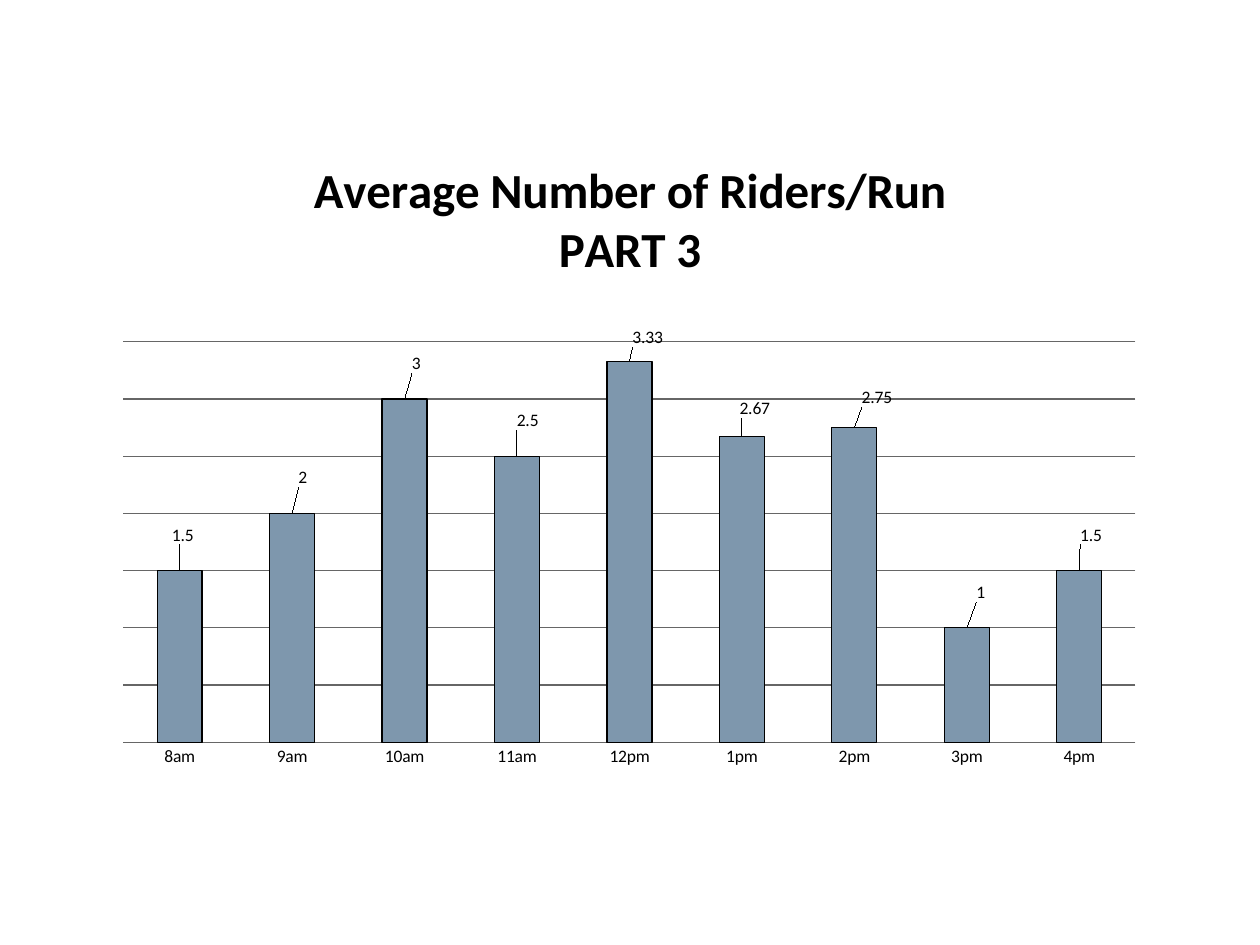
import lxml.etree
import pptx
import pptx.chart.data
import pptx.dml.color
import pptx.enum.chart
import pptx.oxml.ns
import pptx.util

BLACK = pptx.dml.color.RGBColor(0x00, 0x00, 0x00)
GRID_GRAY = pptx.dml.color.RGBColor(0x66, 0x66, 0x66)
STEEL_BLUE = pptx.dml.color.RGBColor(0x7E, 0x97, 0xAD)

TITLE_LINES = ["Average Number of Riders/Run", "PART 3"]

# Hour, riders per run, label shift right and down as shares of the chart
RIDERS = [
    ("8am", 1.5, 0.003, -0.03),
    ("9am", 2, 0.01, -0.03),
    ("10am", 3, 0.011, -0.03),
    ("11am", 2.5, 0.01, -0.03),
    ("12pm", 3.33, 0.017, -0.013),
    ("1pm", 2.67, 0.012, -0.02),
    ("2pm", 2.75, 0.021, -0.022),
    ("3pm", 1, 0.013, -0.03),
    ("4pm", 1.5, 0.011, -0.03),
]


def manual_layout(**settings):
    """Return a c:layout element holding the given settings in order."""
    qn = pptx.oxml.ns.qn
    layout = lxml.etree.Element(qn("c:layout"))
    manual = lxml.etree.SubElement(layout, qn("c:manualLayout"))
    for name, value in settings.items():
        lxml.etree.SubElement(manual, qn(f"c:{name}")).set("val", str(value))
    return layout


class SlideBuilder:
    """Holds the chart style and the current slide."""

    font_name = "Calibri"
    body_size = pptx.util.Pt(10)
    title_size = pptx.util.Pt(28)

    def __init__(self, deck):
        self.deck = deck
        self.slide = deck.slides.add_slide(deck.slide_layouts[6])

    def style_font(self, font, size, bold=False):
        font.name = self.font_name
        font.size = size
        font.bold = bold
        font.color.rgb = BLACK

    def column_chart(self, left, top, width, height, rows):
        """Add a column chart; lengths are shares of the slide."""
        data = pptx.chart.data.CategoryChartData()
        data.categories = [row[0] for row in rows]
        data.add_series("Series 1", [row[1] for row in rows])
        page_width, page_height = self.deck.slide_width, self.deck.slide_height
        chart = self.slide.shapes.add_chart(
            pptx.enum.chart.XL_CHART_TYPE.COLUMN_CLUSTERED,
            round(left * page_width), round(top * page_height),
            round(width * page_width), round(height * page_height), data,
        ).chart
        chart.has_legend = False
        self.style_font(chart.font, self.body_size)
        self.style_axes(chart)
        self.style_columns(chart.plots[0])
        return chart

    def style_axes(self, chart):
        hours = chart.category_axis
        hours.major_tick_mark = pptx.enum.chart.XL_TICK_MARK.NONE
        hours.format.line.color.rgb = GRID_GRAY
        riders = chart.value_axis
        riders.visible = False
        riders.minimum_scale, riders.maximum_scale = 0, 3.5
        riders.major_unit = 0.5
        riders.has_major_gridlines = True
        grid = riders.major_gridlines.format.line
        grid.color.rgb = GRID_GRAY
        grid.width = pptx.util.Pt(0.75)

    def style_columns(self, plot):
        plot.gap_width = 150
        plot.vary_by_categories = False
        columns = plot.series[0]
        columns.format.fill.solid()
        columns.format.fill.fore_color.rgb = STEEL_BLUE
        columns.format.line.color.rgb = BLACK
        columns.format.line.width = pptx.util.Pt(0.75)
        columns.data_labels.show_value = True

    def chart_title(self, chart, lines):
        frame = chart.chart_title.text_frame
        frame.text = "\n".join(lines)
        for para in frame.paragraphs:
            self.style_font(para.font, self.title_size, bold=True)

    def place_plot(self, chart, x, y, w, h):
        """Fix the inner plot area; lengths are shares of the chart."""
        area = chart.plots[0]._element.getparent()
        for old in area.findall(pptx.oxml.ns.qn("c:layout")):
            area.remove(old)
        area.insert(0, manual_layout(
            layoutTarget="inner", xMode="edge", yMode="edge", x=x, y=y, w=w, h=h))

    def shift_labels(self, chart, shifts):
        columns = chart.plots[0].series[0]
        for index, (x, y) in enumerate(shifts):
            label = columns.points[index].data_label
            label.position = pptx.enum.chart.XL_LABEL_POSITION.OUTSIDE_END
            self.style_font(label.font, self.body_size)
        marks = columns._element.iter(pptx.oxml.ns.qn("c:dLbl"))
        for mark, (x, y) in zip(marks, shifts):
            mark.insert(1, manual_layout(x=x, y=y))


def main():
    deck = pptx.Presentation()
    deck.slide_width = pptx.util.Inches(10)
    deck.slide_height = pptx.util.Inches(7.5)
    page = SlideBuilder(deck)
    chart = page.column_chart(0.075, 1.08 / 7.5, 0.85, 5.5 / 7.5, RIDERS)
    page.chart_title(chart, TITLE_LINES)
    page.place_plot(chart, 0.027, 0.297, 0.945, 0.578)
    page.shift_labels(chart, [row[2:] for row in RIDERS])
    deck.save("out.pptx")


if __name__ == "__main__":
    main()
